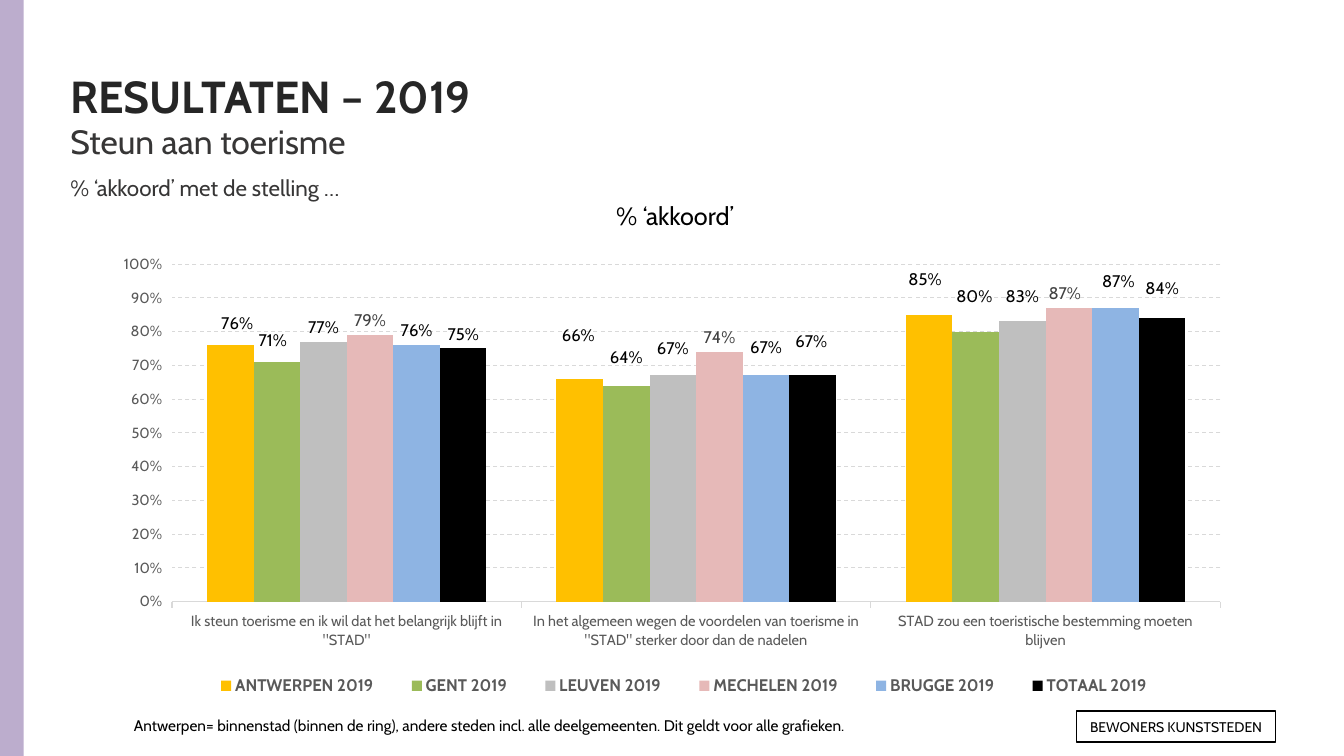
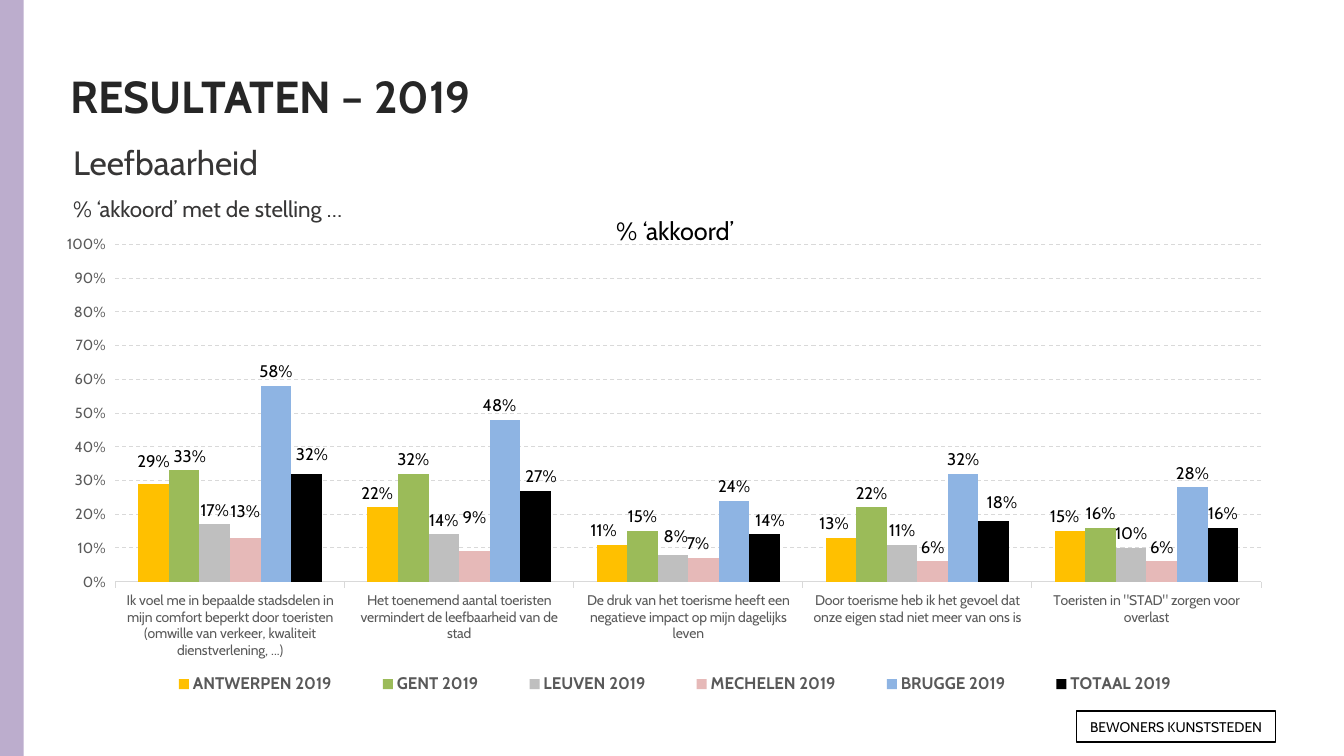
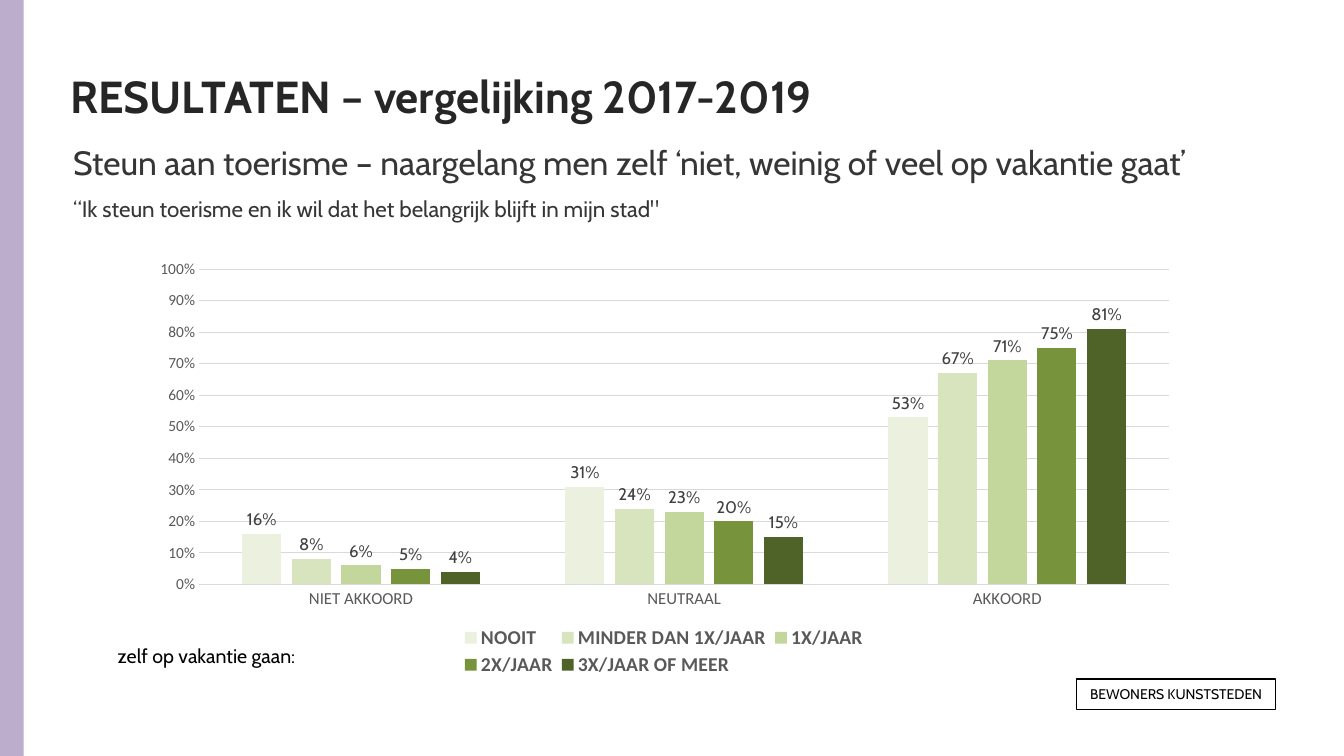
from lxml import etree
from pptx import Presentation
from pptx.chart.data import CategoryChartData
from pptx.dml.color import RGBColor
from pptx.enum.chart import XL_CHART_TYPE, XL_LABEL_POSITION, XL_LEGEND_POSITION, XL_TICK_MARK
from pptx.enum.dml import MSO_LINE
from pptx.enum.shapes import MSO_SHAPE
from pptx.enum.text import MSO_ANCHOR, MSO_AUTO_SIZE, PP_ALIGN
from pptx.oxml.ns import qn
from pptx.util import Pt

COLUMNS = XL_CHART_TYPE.COLUMN_CLUSTERED
OUTSIDE_END = XL_LABEL_POSITION.OUTSIDE_END
LEGEND_BOTTOM = XL_LEGEND_POSITION.BOTTOM
TICK_OUTSIDE, TICK_NONE = XL_TICK_MARK.OUTSIDE, XL_TICK_MARK.NONE
DASH = MSO_LINE.DASH
RECTANGLE = MSO_SHAPE.RECTANGLE
MIDDLE = MSO_ANCHOR.MIDDLE
NO_AUTOFIT = MSO_AUTO_SIZE.NONE
LEFT, CENTER = PP_ALIGN.LEFT, PP_ALIGN.CENTER

FONT, CHART_FONT = "Cabin", "Calibri"
BLACK, TITLE_COLOR, BODY_COLOR = "000000", "262626", "373636"
AXIS_TEXT, GRID, DARK_LABEL, BAND = "595959", "D9D9D9", "404040", "B3A2C7"

# Content
CITIES = [
    ("ANTWERPEN 2019", "FFC000"), ("GENT 2019", "9BBB59"), ("LEUVEN 2019", "BFBFBF"),
    ("MECHELEN 2019", "E6B9B8"), ("BRUGGE 2019", "8EB4E3"), ("TOTAAL 2019", "000000"),
]
FREQUENCIES = [
    ("NOOIT", "EBF1DE"), ("MINDER DAN 1X/JAAR", "D7E4BD"), ("1X/JAAR", "C3D69B"),
    ("2X/JAAR", "77933C"), ("3X/JAAR OF MEER", "4F6228"),
]
CITY_STYLE = dict(
    series=CITIES, gap=150, overlap=0, tick=TICK_OUTSIDE, dash=DASH, font=FONT,
    value_size=10.5, legend_size=12, legend=(0.05, 0.92, 0.9, 0.07), label_color=BLACK,
)
FREQUENCY_STYLE = dict(
    series=FREQUENCIES, gap=219, overlap=-27, tick=TICK_NONE, dash=None, font=CHART_FONT,
    value_size=11, legend_size=14, legend=(0.31, 0.87, 0.38, 0.13), label_color=DARK_LABEL,
)

# Label moves: (series, category) -> (right, down) in points
SLIDES = [
    dict(
        title="RESULTATEN – 2019",
        body=["Steun aan toerisme", "% ‘akkoord’ met de stelling …"],
        body_box=(43, 83, 682, 96),
        chart=dict(
            CITY_STYLE, box=(88.5, 178.5, 793.5, 326), plot=(0.035, 0.031, 0.952, 0.74),
            category_size=10.5, label_colors={3: DARK_LABEL},
            categories=[
                'Ik steun toerisme en ik wil dat het belangrijk blijft in "STAD"',
                'In het algemeen wegen de voordelen van toerisme in "STAD" sterker door dan de nadelen',
                "STAD zou een toeristische bestemming moeten blijven",
            ],
            values=[
                (0.76, 0.66, 0.85), (0.71, 0.64, 0.80), (0.77, 0.67, 0.83),
                (0.79, 0.74, 0.87), (0.76, 0.67, 0.87), (0.75, 0.67, 0.84),
            ],
            moves={
                (0, 0): (5, -5), (0, 1): (-1, -21), (0, 2): (-3, -15),
                (1, 0): (-3, -5), (1, 1): (0, -10), (1, 2): (-1, -15),
                (2, 1): (0, -9), (2, 2): (0, -8), (3, 2): (-3, 0),
                (4, 1): (0, -10), (4, 2): (2, -9), (5, 1): (-1, -14), (5, 2): (0, -11),
            },
        ),
        texts=[
            ("% ‘akkoord’", (433, 139.5, 110, 29), 18, False),
            ("Antwerpen= binnenstad (binnen de ring), andere steden incl. alle deelgemeenten. "
             "Dit geldt voor alle grafieken.", (88.5, 508, 533, 20), 11, True),
        ],
        tag_top=508,
    ),
    dict(
        title="RESULTATEN – 2019",
        body=["Leefbaarheid", "% ‘akkoord’ met de stelling …"],
        body_box=(45, 98, 872, 75),
        chart=dict(
            CITY_STYLE, box=(48, 164, 864, 340), plot=(0.035, 0.031, 0.952, 0.709),
            category_size=10, label_colors={},
            categories=[
                "Ik voel me in bepaalde stadsdelen in mijn comfort beperkt door toeristen "
                "(omwille van verkeer, kwaliteit dienstverlening, ...)",
                "Het toenemend aantal toeristen vermindert de leefbaarheid van de stad",
                "De druk van het toerisme heeft een negatieve impact op mijn dagelijks leven",
                "Door toerisme heb ik het gevoel dat onze eigen stad niet meer van ons is",
                'Toeristen in "STAD" zorgen voor overlast',
            ],
            values=[
                (0.29, 0.22, 0.11, 0.13, 0.15), (0.33, 0.32, 0.15, 0.22, 0.16),
                (0.17, 0.14, 0.08, 0.11, 0.10), (0.13, 0.09, 0.07, 0.06, 0.06),
                (0.58, 0.48, 0.24, 0.32, 0.28), (0.32, 0.27, 0.14, 0.18, 0.16),
            ],
            moves={
                (0, 0): (0, -6), (0, 1): (-4, 0), (0, 2): (-6, 0), (0, 3): (-5, 0),
                (0, 4): (-4, 0), (1, 0): (4, 0), (2, 2): (2, -3), (3, 0): (0, -9),
                (3, 1): (0, -14), (3, 2): (-4, 0), (4, 1): (-4, 0), (5, 0): (4, -4),
                (5, 1): (4, 0), (5, 2): (4, 0), (5, 3): (6, -3),
            },
        ),
        texts=[("% ‘akkoord’", (433, 150, 110, 29), 18, False)],
        tag_top=508,
    ),
    dict(
        title="RESULTATEN – vergelijking 2017-2019",
        body=["Steun aan toerisme – naargelang men zelf ‘niet, weinig of veel op vakantie gaat’",
              '“Ik steun toerisme en ik wil dat het belangrijk blijft in mijn stad"'],
        body_box=(45, 98, 901, 96),
        chart=dict(
            FREQUENCY_STYLE, box=(83, 173.5, 782.5, 312), plot=(0.076, 0.06, 0.885, 0.722),
            category_size=12, label_colors={},
            categories=["NIET AKKOORD", "NEUTRAAL", "AKKOORD"],
            values=[
                (0.16, 0.31, 0.53), (0.08, 0.24, 0.67), (0.06, 0.23, 0.71),
                (0.05, 0.20, 0.75), (0.04, 0.15, 0.81),
            ],
            moves={},
        ),
        texts=[("zelf op vakantie gaan:", (77, 456, 145, 24), 14, False)],
        tag_top=485,
    ),
]


# Helpers
def rgb(color):
    return RGBColor.from_string(color)


def points(box):
    return [Pt(length) for length in box]


def style_font(font, size, color, name=FONT, bold=False):
    font.size, font.name, font.bold = Pt(size), name, bold
    font.color.rgb = rgb(color)


def place(shape, box):
    shape.left, shape.top, shape.width, shape.height = points(box)


def set_layout(parent, index, **settings):
    """Give a chart part a manual layout as fractions of the chart."""
    for old_layout in parent.findall(qn("c:layout")):
        parent.remove(old_layout)
    layout = etree.Element(qn("c:layout"))
    manual = etree.SubElement(layout, qn("c:manualLayout"))
    for name, value in settings.items():
        etree.SubElement(manual, qn("c:" + name)).set("val", str(value))
    parent.insert(index, layout)


def edge_layout(box):
    x, y, width, height = box
    return dict(xMode="edge", yMode="edge", x=x, y=y, w=width, h=height)


# Slide parts
def add_band(slide):
    """Draw the side band and move it to the layout, behind every slide."""
    band = slide.shapes.add_shape(RECTANGLE, *points((0, 0, 17, 540)))
    band.shadow.inherit = False
    band.line.fill.background()
    band.fill.solid()
    band.fill.fore_color.rgb = rgb(BAND)
    color = band._element.spPr.find(".//" + qn("a:srgbClr"))
    etree.SubElement(color, qn("a:alpha")).set("val", "88000")
    slide.slide_layout.shapes._spTree.insert(2, band._element)


def add_title(slide, text):
    title = slide.shapes.title
    place(title, (43, 23, 684, 90))
    title.text_frame.text = text
    title.text_frame.vertical_anchor = MIDDLE
    title.text_frame.auto_size = NO_AUTOFIT
    paragraph = title.text_frame.paragraphs[0]
    paragraph.alignment = LEFT
    style_font(paragraph.font, 32, TITLE_COLOR, bold=True)


def add_body(slide, lines, box):
    body = slide.placeholders[1]
    place(body, box)
    frame = body.text_frame
    frame.text = "\n".join(lines)
    frame.auto_size = NO_AUTOFIT
    for paragraph, size, before in zip(frame.paragraphs, (24, 16), (0, 1)):
        properties = paragraph._p.get_or_add_pPr()
        properties.set("marL", "0")
        properties.set("indent", "0")
        etree.SubElement(properties, qn("a:buNone"))
        paragraph.space_before, paragraph.space_after = Pt(before), Pt(8)
        style_font(paragraph.font, size, BODY_COLOR)


def add_text(slide, text, box, size, wrap):
    frame = slide.shapes.add_textbox(*points(box)).text_frame
    frame.word_wrap = wrap
    frame.vertical_anchor = MIDDLE
    frame.text = text
    style_font(frame.paragraphs[0].font, size, BLACK)


def add_tag(slide, top):
    tag = slide.shapes.add_shape(RECTANGLE, *points((769, top, 142, 22)))
    tag.shadow.inherit = False
    tag.fill.background()
    tag.line.color.rgb = rgb(BLACK)
    tag.line.width = Pt(1)
    tag.text_frame.text = "BEWONERS KUNSTSTEDEN"
    tag.text_frame.vertical_anchor = MIDDLE
    paragraph = tag.text_frame.paragraphs[0]
    paragraph.alignment = CENTER
    style_font(paragraph.font, 10, BLACK)


def style_axes(chart, content):
    category_axis, value_axis = chart.category_axis, chart.value_axis
    for axis, size in ((category_axis, content["category_size"]),
                       (value_axis, content["value_size"])):
        axis.major_tick_mark, axis.minor_tick_mark = content["tick"], TICK_NONE
        style_font(axis.tick_labels.font, size, AXIS_TEXT, content["font"])
    value_axis.minimum_scale, value_axis.maximum_scale, value_axis.major_unit = 0, 1, 0.1
    value_axis.tick_labels.number_format = "0%"
    value_axis.tick_labels.number_format_is_linked = False
    value_axis.has_major_gridlines = True
    grid = value_axis.major_gridlines.format.line
    for line in (category_axis.format.line, grid):
        line.color.rgb = rgb(GRID)
        line.width = Pt(0.75)
    if content["dash"]:
        grid.dash_style = content["dash"]
    value_axis.format.line.fill.background()


def style_labels(series, color, moves, chart_size):
    """Label a series; moves maps a category index to an offset in points."""
    labels = series.data_labels
    labels.show_value = True
    labels.number_format, labels.number_format_is_linked = "0%", False
    labels.position = OUTSIDE_END
    style_font(labels.font, 12, color)
    for leader_lines in labels._element.findall(qn("c:showLeaderLines")):
        leader_lines.set("val", "0")
    for index in moves:
        label = series.points[index].data_label
        style_font(label.font, 12, color)
        label.position = OUTSIDE_END
    for label in labels._element.findall(qn("c:dLbl")):
        offset = moves[int(label.find(qn("c:idx")).get("val"))]
        x, y = (round(move / size, 4) for move, size in zip(offset, chart_size))
        set_layout(label, 1, x=x, y=y)
        number_format = etree.Element(qn("c:numFmt"), formatCode="0%", sourceLinked="0")
        label.insert(2, number_format)


def add_column_chart(slide, content):
    data = CategoryChartData(number_format="0%")
    data.categories = content["categories"]
    for (name, _), values in zip(content["series"], content["values"]):
        data.add_series(name, values)
    chart = slide.shapes.add_chart(COLUMNS, *points(content["box"]), data).chart
    chart.has_title = False
    style_font(chart.font, 10, BLACK, CHART_FONT)
    style_axes(chart, content)

    plot = chart.plots[0]
    plot.gap_width, plot.overlap = content["gap"], content["overlap"]
    plot.vary_by_categories = False
    for number, (series, (_, color)) in enumerate(zip(plot.series, content["series"])):
        series.format.fill.solid()
        series.format.fill.fore_color.rgb = rgb(color)
        moves = {category: move for (row, category), move in content["moves"].items()
                 if row == number}
        label_color = content["label_colors"].get(number, content["label_color"])
        style_labels(series, label_color, moves, content["box"][2:])

    chart.has_legend = True
    legend = chart.legend
    legend.position = LEGEND_BOTTOM
    legend.include_in_layout = False
    style_font(legend.font, content["legend_size"], AXIS_TEXT, content["font"], bold=True)
    set_layout(legend._element, 1, **edge_layout(content["legend"]))
    plot_area = chart._chartSpace.find(".//" + qn("c:plotArea"))
    set_layout(plot_area, 0, layoutTarget="inner", **edge_layout(content["plot"]))


def main():
    presentation = Presentation()
    presentation.slide_width, presentation.slide_height = Pt(960), Pt(540)
    layout = presentation.slide_layouts[1]
    for content in SLIDES:
        slide = presentation.slides.add_slide(layout)
        add_title(slide, content["title"])
        add_body(slide, content["body"], content["body_box"])
        add_column_chart(slide, content["chart"])
        for text in content["texts"]:
            add_text(slide, *text)
        add_tag(slide, content["tag_top"])
    add_band(presentation.slides[0])
    presentation.save("out.pptx")


if __name__ == "__main__":
    main()
